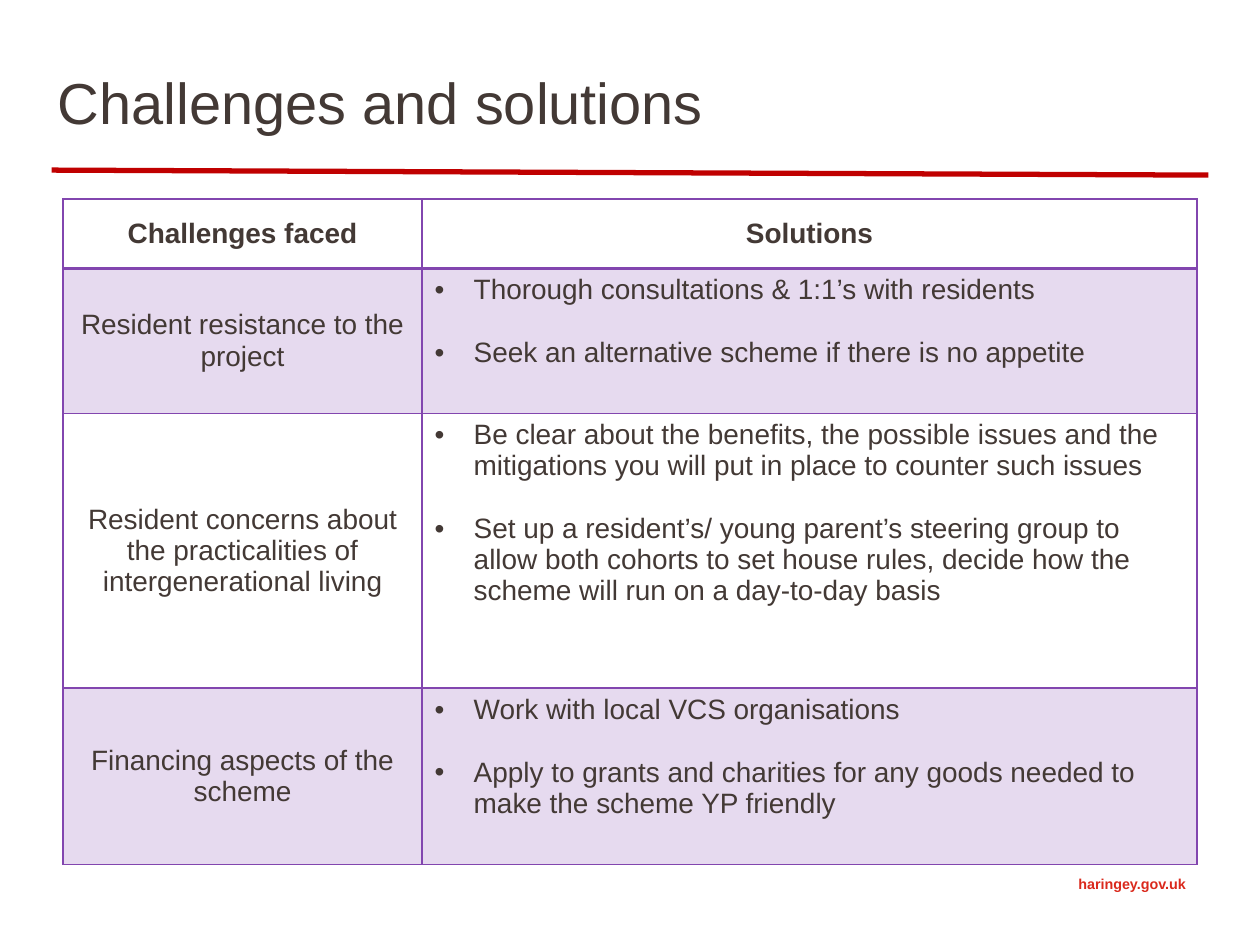
from lxml.etree import SubElement
from pptx import Presentation
from pptx.dml.color import RGBColor
from pptx.enum.shapes import MSO_CONNECTOR
from pptx.enum.text import MSO_ANCHOR, PP_ALIGN
from pptx.oxml.ns import qn
from pptx.util import Inches, Pt

INK = RGBColor(0x43, 0x39, 0x35)
RED = RGBColor(0xC0, 0x00, 0x00)
BRIGHT = RGBColor(0xDA, 0x29, 0x1C)
PURPLE = RGBColor(0x82, 0x46, 0xAF)
LILAC = RGBColor(0xE6, 0xDA, 0xEF)

WIDTHS = [2.85, 6.15]
HEIGHTS = [0.55, 1.15, 2.18, 1.4]
HEADS = ["Challenges faced", "Solutions"]
ROWS = [
    ("Resident resistance to the project",
     ["Thorough consultations & 1:1’s with residents",
      "Seek an alternative scheme if there is no appetite"]),
    ("Resident concerns about the practicalities of intergenerational living",
     ["Be clear about the benefits, the possible issues and the mitigations "
      "you will put in place to counter such issues",
      "Set up a resident’s/ young parent’s steering group to allow both cohorts "
      "to set house rules, decide how the scheme will run on a day-to-day basis"]),
    ("Financing aspects of the scheme",
     ["Work with local VCS organisations",
      "Apply to grants and charities for any goods needed to make the scheme "
      "YP friendly"]),
]


def write(frame, texts, size=16, color=INK, bold=False,
          align=PP_ALIGN.LEFT, bullet=False, gap=18):
    frame.word_wrap = True
    for i, text in enumerate(texts):
        para = frame.add_paragraph() if i else frame.paragraphs[0]
        if bullet:
            props = para._p.get_or_add_pPr()
            props.set("marL", str(Inches(0.31)))
            props.set("indent", str(-Inches(0.31)))
            SubElement(props, qn("a:buFont"), typeface="Arial")
            SubElement(props, qn("a:buChar"), char="•")
        para.alignment = align
        if i:
            para.space_before = Pt(gap)
        run = para.add_run()
        run.text = text
        font = run.font
        font.name, font.size, font.bold = "Arial", Pt(size), bold
        font.color.rgb = color


def add_title(slide, text):
    title = slide.shapes.title
    title.left, title.top = Inches(0.36), Inches(0.18)
    title.width, title.height = Inches(9), Inches(1.25)
    title.text_frame.vertical_anchor = MSO_ANCHOR.MIDDLE
    write(title.text_frame, [text], size=33)


def add_rule(slide):
    rule = slide.shapes.add_connector(
        MSO_CONNECTOR.STRAIGHT,
        Inches(0.41), Inches(1.35), Inches(9.59), Inches(1.39))
    rule.line.color.rgb = RED
    rule.line.width = Pt(3)
    SubElement(rule._element.spPr, qn("a:effectLst"))


def edge(cell, side, width):
    line = SubElement(cell._tc.get_or_add_tcPr(), qn("a:ln" + side),
                      w=str(Pt(width)))
    fill = SubElement(line, qn("a:solidFill"))
    SubElement(fill, qn("a:srgbClr"), val=str(PURPLE))


def style(cell, row):
    for side in "LRTB":
        thick = (row, side) in [(0, "B"), (1, "T")]
        edge(cell, side, 2 if thick else 1)
    if row % 2:
        cell.fill.solid()
        cell.fill.fore_color.rgb = LILAC
    else:
        cell.fill.background()


def add_grid(slide):
    table = slide.shapes.add_table(
        len(HEIGHTS), len(WIDTHS), Inches(0.5), Inches(1.58),
        Inches(sum(WIDTHS)), Inches(sum(HEIGHTS))).table
    table.first_row = table.horz_banding = False
    for col, width in zip(table.columns, WIDTHS):
        col.width = Inches(width)
    for row, height in zip(table.rows, HEIGHTS):
        row.height = Inches(height)
    for r, pair in enumerate([HEADS] + ROWS):
        for c, text in enumerate(pair):
            cell = table.cell(r, c)
            style(cell, r)
            if isinstance(text, list):
                write(cell.text_frame, text, bullet=True)
            else:
                cell.vertical_anchor = MSO_ANCHOR.MIDDLE
                write(cell.text_frame, [text], bold=r == 0,
                      align=PP_ALIGN.CENTER)


def add_foot(slide, text):
    box = slide.shapes.add_textbox(
        Inches(6.34), Inches(6.9), Inches(3.17), Inches(0.4))
    write(box.text_frame, [text], size=8.2, color=BRIGHT, bold=True,
          align=PP_ALIGN.RIGHT)


def main():
    deck = Presentation()
    deck.slide_width, deck.slide_height = Inches(10), Inches(7.5)
    slide = deck.slides.add_slide(deck.slide_layouts[5])
    add_foot(slide, "haringey.gov.uk")
    add_title(slide, "Challenges and solutions")
    add_rule(slide)
    add_grid(slide)
    deck.save("out.pptx")


if __name__ == "__main__":
    main()
